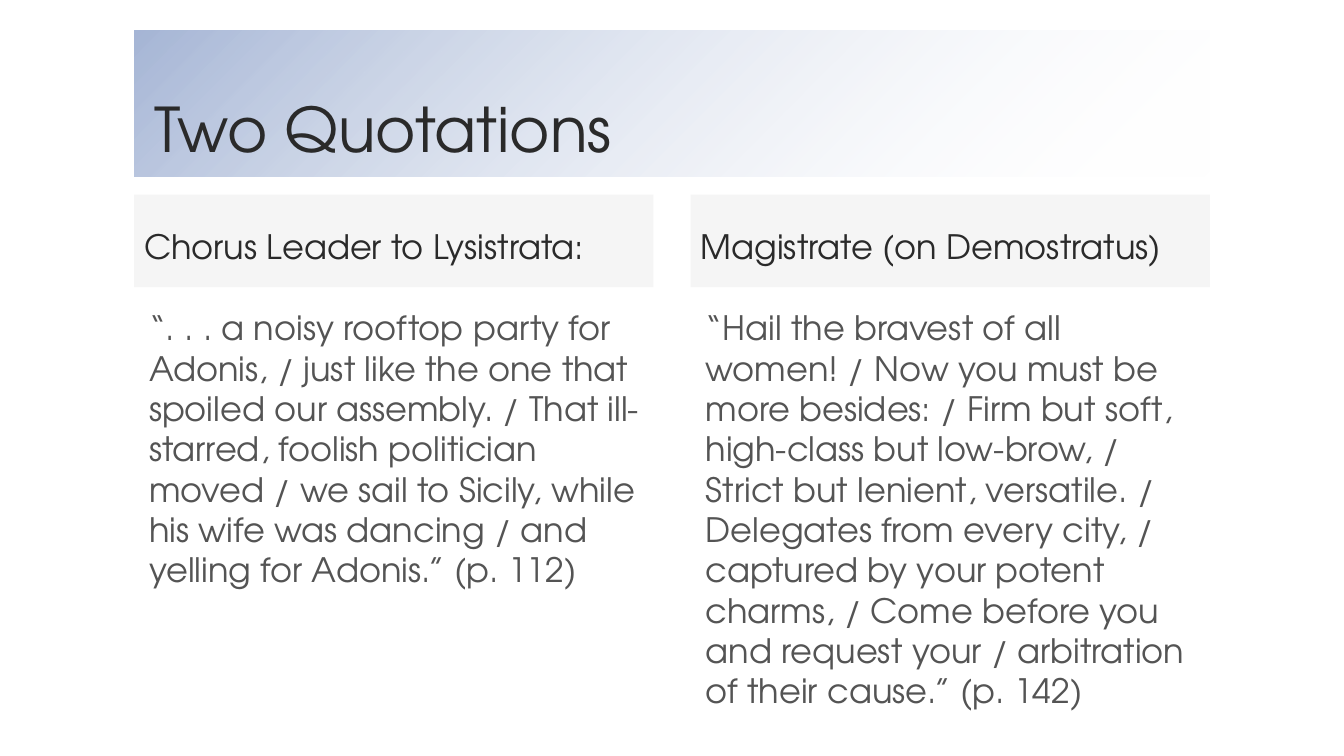
import pptx
import pptx.dml.color
import pptx.enum.shapes
import pptx.enum.text
import pptx.oxml.ns
import pptx.util
import lxml.etree

THEME = {
    "font": "TeX Gyre Adventor",
    "dark": "2A2A2A", "body": "545454",
    "band_start": "A6B6D6", "band_end": "FFFFFF", "panel": "BFBFBF",
    "title_size": 44, "text_size": 24,
}
ANCHOR = pptx.enum.text.MSO_ANCHOR
Inches = pptx.util.Inches
rgb = pptx.dml.color.RGBColor.from_string


def write(box, text, size=THEME["text_size"], color=THEME["dark"], anchor=ANCHOR.TOP,
          line_spacing=None, space_before=None, side_inset=0.1, inset=0.05, indent=0):
    frame = box.text_frame
    frame.word_wrap = True
    frame.auto_size = pptx.enum.text.MSO_AUTO_SIZE.NONE
    frame.vertical_anchor = anchor
    frame.margin_left = frame.margin_right = Inches(side_inset)
    frame.margin_top = frame.margin_bottom = Inches(inset)
    para = frame.paragraphs[0]
    para.alignment = pptx.enum.text.PP_ALIGN.LEFT
    para.line_spacing = line_spacing
    if space_before is not None:
        para.space_before = pptx.util.Pt(space_before)
    if indent:
        para._p.get_or_add_pPr().set("marL", str(Inches(indent)))
    span = para.add_run()
    span.text = text
    span.font.name = THEME["font"]
    span.font.size = pptx.util.Pt(size)
    span.font.color.rgb = rgb(color)


def set_alpha(color_element, percent):
    alpha = lxml.etree.SubElement(color_element, pptx.oxml.ns.qn("a:alpha"))
    alpha.set("val", str(percent * 1000))


deck = pptx.Presentation()
deck.slide_width, deck.slide_height = Inches(13.33), Inches(7.5)
page = deck.slides.add_slide(deck.slide_layouts[5])

# Grid: two columns with a gutter, under a full-width title
left, column_width, gutter = 1.33, 5.15, 0.37
full_width = 2 * column_width + gutter
heading_top, heading_height = 1.93, 0.92
quote_top, quote_height = 3, 4.5

# Title on a band that fades out
title = page.shapes.title
title.left, title.top = Inches(left), Inches(0.3)
title.width, title.height = Inches(full_width), Inches(1.45)
title.fill.gradient()
title.fill.gradient_angle = 315
for stop, color in zip(title.fill.gradient_stops, (THEME["band_start"], THEME["band_end"])):
    stop.color.rgb = rgb(color)
band_colors = title._element.spPr.findall(".//" + pptx.oxml.ns.qn("a:srgbClr"))
set_alpha(band_colors[-1], 0)
write(title, "Two Quotations", size=THEME["title_size"], anchor=ANCHOR.BOTTOM,
      line_spacing=0.9, side_inset=0.2, inset=0.1)

# Each column: a heading panel above its quotation
quotations = [
    ("Chorus Leader to Lysistrata:",
     "“. . . a noisy rooftop party for Adonis, / just like the one that spoiled our "
     "assembly. / That ill-starred, foolish politician moved / we sail to Sicily, while "
     "his wife was dancing / and yelling for Adonis.” (p. 112)"),
    ("Magistrate (on Demostratus)",
     "“Hail the bravest of all women! / Now you must be more besides: / Firm but soft, "
     "high-class but low-brow, / Strict but lenient, versatile. / Delegates from every "
     "city, / captured by your potent charms, / Come before you and request your / "
     "arbitration of their cause.” (p. 142)"),
]
for column, (speaker, quotation) in enumerate(quotations):
    x = Inches(left + column * (column_width + gutter))
    width = Inches(column_width)

    panel = page.shapes.add_shape(pptx.enum.shapes.MSO_SHAPE.RECTANGLE, x,
                                  Inches(heading_top), width, Inches(heading_height))
    panel.shadow.inherit = False
    panel.line.fill.background()
    panel.fill.solid()
    panel.fill.fore_color.rgb = rgb(THEME["panel"])
    set_alpha(panel._element.spPr.find(".//" + pptx.oxml.ns.qn("a:srgbClr")), 15)
    write(panel, speaker, anchor=ANCHOR.MIDDLE, line_spacing=1.25)

    box = page.shapes.add_textbox(x, Inches(quote_top), width, Inches(quote_height))
    write(box, quotation, color=THEME["body"], space_before=18, indent=0.05)

deck.save("out.pptx")
